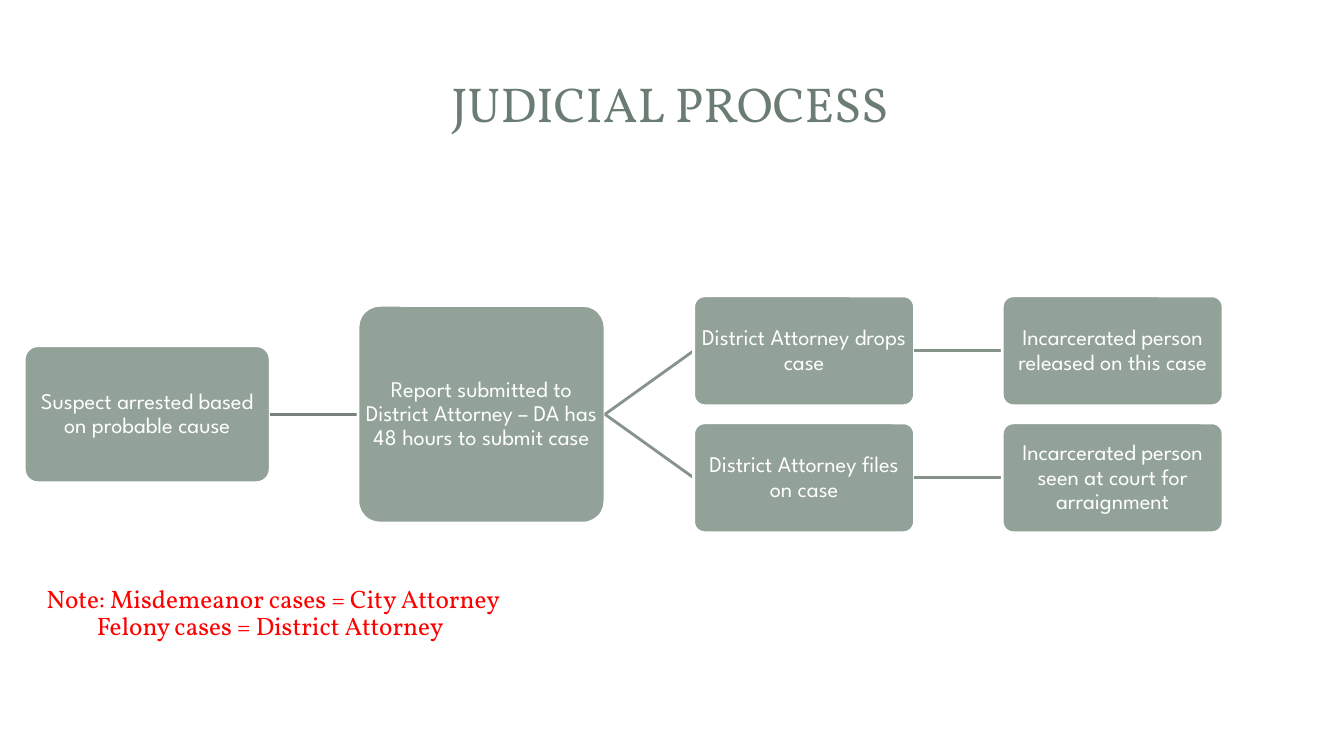
from lxml.etree import SubElement
from pptx import Presentation
from pptx.dml.color import RGBColor
from pptx.enum.shapes import MSO_CONNECTOR, MSO_SHAPE
from pptx.enum.text import MSO_ANCHOR, PP_ALIGN
from pptx.oxml.ns import qn
from pptx.util import Inches, Pt

COLORS = {
    "title": "6B7D72",
    "box": "93A299",
    "white": "FFFFFF",
    "first_link": "76827B",
    "link": "85938B",
    "note": "FF0000",
}


def style(p, font, size, color):
    p.font.name = font
    p.font.size = Pt(size)
    p.font.color.rgb = RGBColor.from_string(COLORS[color])


prs = Presentation()
prs.slide_width = Inches(13.33)
prs.slide_height = Inches(7.5)
s = prs.slides.add_slide(prs.slide_layouts[6])

title = s.shapes.add_textbox(Inches(0.62), Inches(0.45), Inches(12.05), Inches(1.14))
tf = title.text_frame
tf.word_wrap = True
tf.vertical_anchor = MSO_ANCHOR.MIDDLE
p = tf.paragraphs[0]
p.text = "JUDICIAL PROCESS"
p.alignment = PP_ALIGN.CENTER
style(p, "Vollkorn", 35, "title")

MIDDLE, UPPER, LOWER = 4.11, 3.48, 4.74
steps = [
    ("arrest", None, 0.24, MIDDLE, 2.44, 1.36, "Suspect arrested based on probable cause"),
    ("report", "arrest", 3.55, MIDDLE, 2.45, 2.16,
     "Report submitted to District Attorney – DA has 48 hours to submit case"),
    ("drops", "report", 6.88, UPPER, 2.19, 1.09, "District Attorney drops case"),
    ("released", "drops", 9.94, UPPER, 2.19, 1.09, "Incarcerated person released on this case"),
    ("files", "report", 6.88, LOWER, 2.19, 1.09, "District Attorney files on case"),
    ("court", "files", 9.94, LOWER, 2.19, 1.09,
     "Incarcerated person seen at court for arraignment"),
]
boxes = {}
for name, parent, left, middle, width, height, text in steps:
    box = s.shapes.add_shape(
        MSO_SHAPE.ROUNDED_RECTANGLE,
        Inches(left), Inches(middle - height / 2), Inches(width), Inches(height),
    )
    boxes[name] = box
    box.adjustments[0] = 0.1
    box.shadow.inherit = False
    box.fill.solid()
    box.fill.fore_color.rgb = RGBColor.from_string(COLORS["box"])
    box.line.color.rgb = RGBColor.from_string(COLORS["white"])
    box.line.width = Pt(2)
    tf = box.text_frame
    tf.word_wrap = True
    tf.vertical_anchor = MSO_ANCHOR.MIDDLE
    tf.margin_left = tf.margin_right = tf.margin_top = tf.margin_bottom = Inches(0.01)
    p = tf.paragraphs[0]
    p.text = text
    p.alignment = PP_ALIGN.CENTER
    p.line_spacing = 0.9
    style(p, "League Spartan", 16, "white")

    if parent:
        link = s.shapes.add_connector(MSO_CONNECTOR.STRAIGHT, 0, 0, 0, 0)
        link.begin_connect(boxes[parent], 3)
        link.end_connect(box, 1)
        color = "first_link" if parent == "arrest" else "link"
        link.line.color.rgb = RGBColor.from_string(COLORS[color])
        link.line.width = Pt(2)
        SubElement(link.element.spPr, qn("a:effectLst"))
        link.element.addnext(box.element)

note = s.shapes.add_textbox(Inches(0.46), Inches(5.21), Inches(10.92), Inches(1.2))
tf = note.text_frame
tf.word_wrap = True
tf.vertical_anchor = MSO_ANCHOR.BOTTOM
tf.margin_left = tf.margin_right = 0
tf.text = "Note: Misdemeanor cases = City Attorney\nFelony cases = District Attorney"
for p, indent in zip(tf.paragraphs, (0, 0.5)):
    p.line_spacing = 0.9
    p._p.get_or_add_pPr().set("marL", str(Inches(indent)))
    style(p, "Vollkorn", 18, "note")

prs.save("out.pptx")
